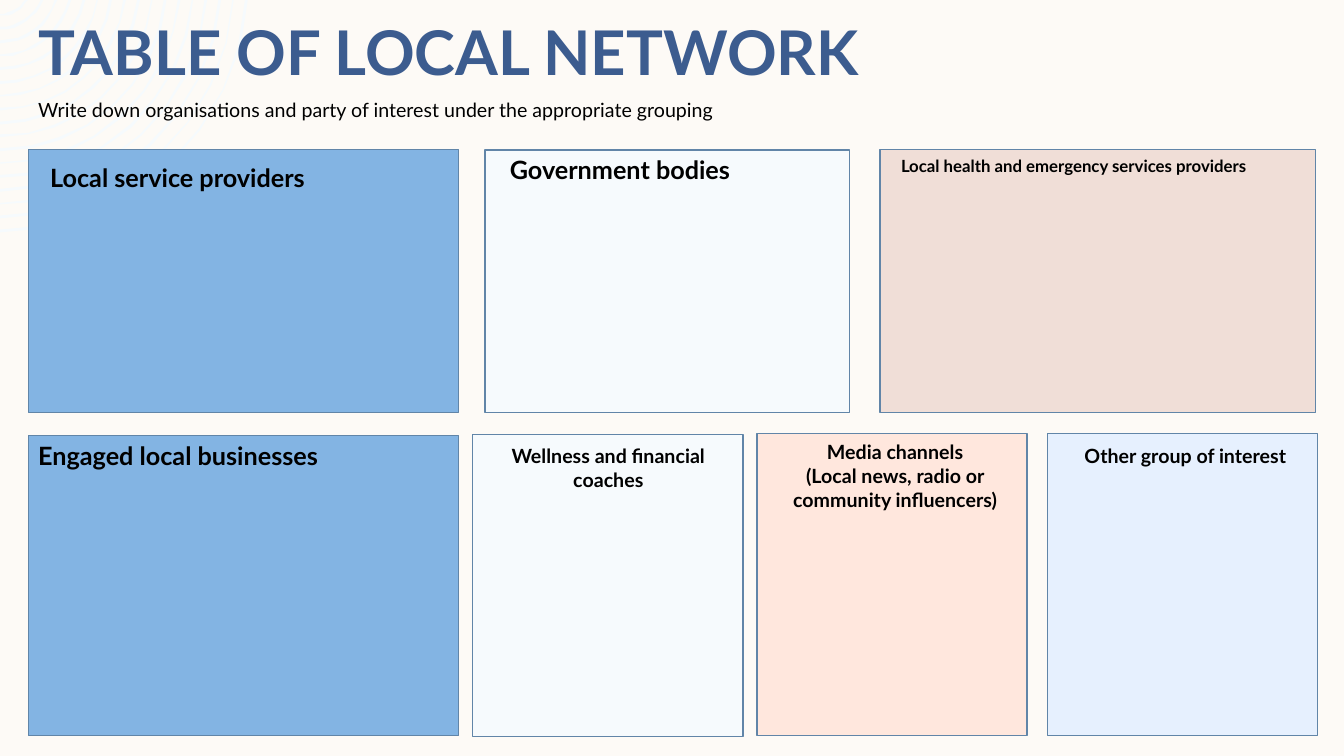
from dataclasses import dataclass
from math import asin, cos, pi, sin

from pptx import Presentation
from pptx.dml.color import RGBColor
from pptx.enum.shapes import MSO_SHAPE
from pptx.enum.text import MSO_ANCHOR, PP_ALIGN
from pptx.util import Pt

RECT = MSO_SHAPE.RECTANGLE
TOP, MIDDLE = MSO_ANCHOR.TOP, MSO_ANCHOR.MIDDLE
LEFT, CENTER = PP_ALIGN.LEFT, PP_ALIGN.CENTER

FONT = "Lato"
BLACK, TITLE_BLUE, BORDER = "000000", "3C5C8F", "6185A8"
BACKGROUND, PALE, BLUE = "FDFAF6", "F6FAFD", "83B4E3"

RING_COUNT, RING_STEP, RING_WIDTH = 17, 9.64, 1.75
RING_RADIUS, RING_CENTER_Y = 177.4, -11.7
ARC_STEPS = 8


@dataclass
class Box:
    x: float
    y: float
    w: float
    h: float


@dataclass
class Panel:
    box: Box
    fill: str
    lines: list[str]
    label: Box
    size: float
    align: PP_ALIGN = LEFT


PANELS = [
    Panel(Box(20.2, 106.6, 307.4, 187.9), BLUE, ["Local service providers"],
          Box(28.8, 112.3, 249.8, 29), 18),
    Panel(Box(346.3, 107.3, 260.6, 187.2), PALE, ["Government bodies"],
          Box(357.1, 106.6, 249.8, 29), 18),
    Panel(Box(628.6, 106.6, 311, 187.9), "F0DED7",
          ["Local health and emergency services providers"],
          Box(636.5, 108, 294.5, 21.8), 12),
    Panel(Box(20.2, 311, 307.4, 214.6), BLUE, ["Engaged local businesses"],
          Box(20.2, 311, 249.8, 29), 18),
    Panel(Box(337.7, 310.3, 193, 216), PALE, ["Wellness and financial coaches"],
          Box(341.3, 313.9, 186.5, 41), 14, CENTER),
    Panel(Box(540.7, 309.6, 193, 216), "FFE7DD",
          ["Media channels", "(Local news, radio or community influencers)"],
          Box(542.9, 311, 193, 58.3), 14, CENTER),
    Panel(Box(748.1, 309.6, 193, 216), "E6F0FE", ["Other group of interest"],
          Box(743, 313.2, 207.4, 24.5), 14, CENTER),
]


def rgb(color: str) -> RGBColor:
    return RGBColor.from_string(color)


def place(box: Box) -> tuple[Pt, Pt, Pt, Pt]:
    return Pt(box.x), Pt(box.y), Pt(box.w), Pt(box.h)


def add_text(s, box: Box, lines: list[str], size: float, color: str = BLACK,
             bold: bool = True, align: PP_ALIGN = LEFT,
             anchor: MSO_ANCHOR = TOP) -> None:
    tf = s.shapes.add_textbox(*place(box)).text_frame
    tf.word_wrap = True
    tf.vertical_anchor = anchor
    for i, line in enumerate(lines):
        p = tf.add_paragraph() if i else tf.paragraphs[0]
        p.alignment = align
        r = p.add_run()
        r.text = line
        r.font.name = FONT
        r.font.size = Pt(size)
        r.font.bold = bold
        r.font.color.rgb = rgb(color)


def add_panel(s, panel: Panel) -> None:
    sp = s.shapes.add_shape(RECT, *place(panel.box))
    sp.shadow.inherit = False
    sp.fill.solid()
    sp.fill.fore_color.rgb = rgb(panel.fill)
    sp.line.color.rgb = rgb(BORDER)
    sp.line.width = Pt(1)
    add_text(s, panel.label, panel.lines, panel.size, align=panel.align)


def arc(radius: float) -> list[tuple[float, float]]:
    """Points from the top edge of the slide round to its left edge."""
    start = asin(-RING_CENTER_Y / radius)
    angles = [start + (pi / 2 - start) * i / ARC_STEPS for i in range(ARC_STEPS + 1)]
    return [(radius * cos(a), RING_CENTER_Y + radius * sin(a)) for a in angles]


def add_corner_rings(s) -> None:
    rings = []
    for i in range(RING_COUNT):
        radius = RING_RADIUS - i * RING_STEP
        rings.append(arc(radius) + arc(radius - RING_WIDTH)[::-1])
    builder = s.shapes.build_freeform(*rings[0][0], scale=Pt(1))
    for i, ring in enumerate(rings):
        if i:
            builder.move_to(*ring[0])
        builder.add_line_segments(ring[1:], close=True)
    sp = builder.convert_to_shape()
    sp.shadow.inherit = False
    sp.fill.solid()
    sp.fill.fore_color.rgb = rgb(PALE)
    sp.line.fill.background()


def main() -> None:
    prs = Presentation()
    prs.slide_width, prs.slide_height = Pt(960), Pt(540)
    s = prs.slides.add_slide(prs.slide_layouts[6])
    s.background.fill.solid()
    s.background.fill.fore_color.rgb = rgb(BACKGROUND)

    add_corner_rings(s)
    add_text(s, Box(20.2, 5.8, 840.2, 60.5), ["TABLE OF LOCAL NETWORK"], 44,
             TITLE_BLUE, anchor=MIDDLE)
    add_text(s, Box(20.2, 66.2, 725.8, 24.5),
             ["Write down organisations and party of interest "
              "under the appropriate grouping"], 14, bold=False)
    for panel in PANELS:
        add_panel(s, panel)
    prs.save("out.pptx")


if __name__ == "__main__":
    main()
